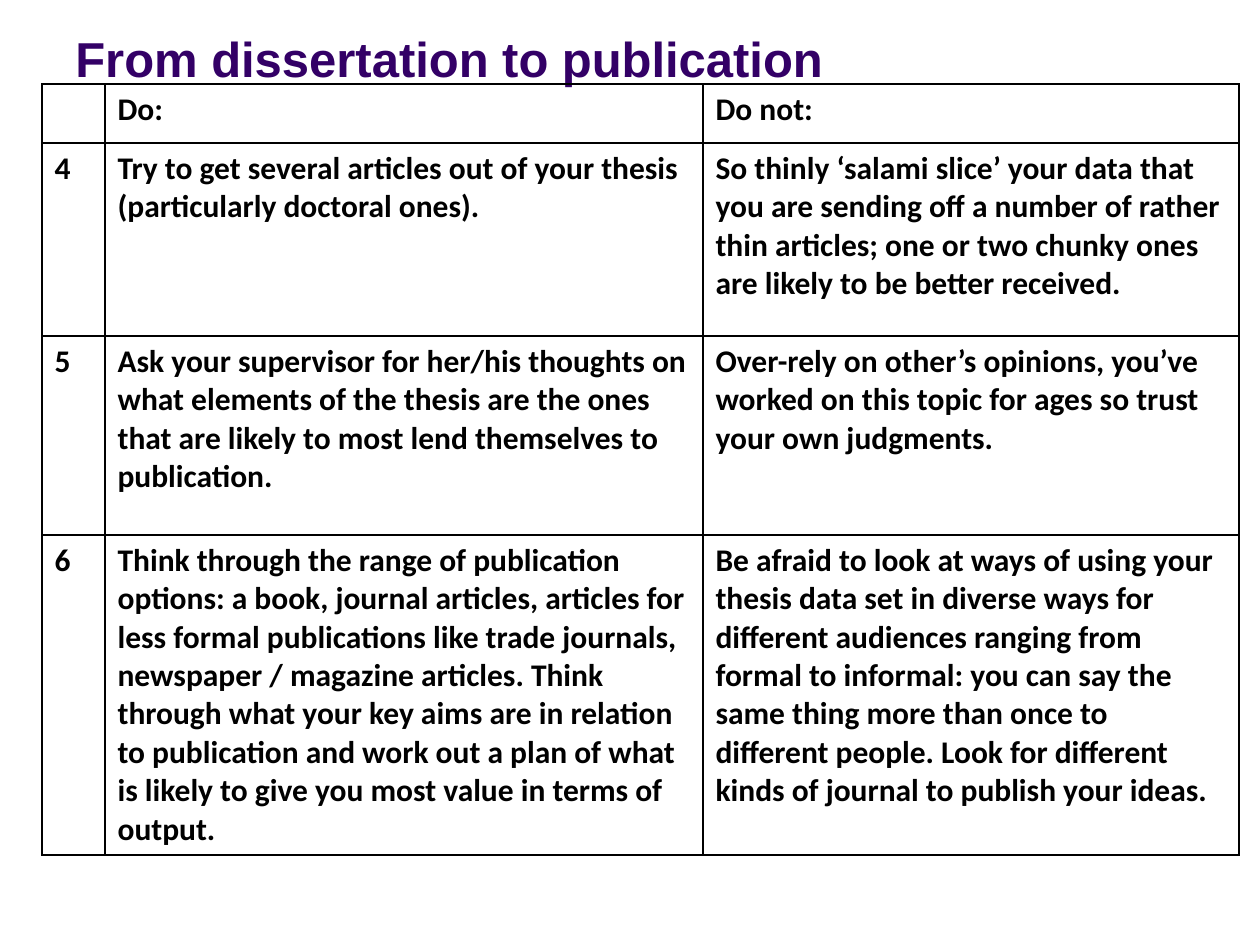
import pptx
import pptx.dml.color
import pptx.enum.text
import pptx.oxml
import pptx.oxml.ns
import pptx.util

EMU_PER_PX = 914400 / 126


def px(length):
    return pptx.util.Emu(round(length * EMU_PER_PX))


def style(paragraph, name, size, color):
    paragraph.font.name = name
    paragraph.font.size = pptx.util.Pt(size)
    paragraph.font.bold = True
    paragraph.font.color.rgb = pptx.dml.color.RGBColor.from_string(color)


deck = pptx.Presentation()
deck.slide_width, deck.slide_height = px(1260), px(945)
page = deck.slides.add_slide(deck.slide_layouts[6])

# Title
title = page.shapes.add_textbox(px(63), px(21), px(1040), px(73)).text_frame
title.word_wrap = True
title.vertical_anchor = pptx.enum.text.MSO_ANCHOR.BOTTOM
title.text = "From dissertation to publication"
style(title.paragraphs[0], "Arial", 28, "330066")

# Advice table
advice = [
    ("", "Do:", "Do not:"),
    ("4",
     "Try to get several articles out of your thesis (particularly doctoral ones).",
     "So thinly ‘salami slice’ your data that you are sending off a number of rather "
     "thin articles; one or two chunky ones are likely to be better received."),
    ("5",
     "Ask your supervisor for her/his thoughts on what elements of the thesis are the "
     "ones that are likely to most lend themselves to publication.",
     "Over-rely on other’s opinions, you’ve worked on this topic for ages so trust "
     "your own judgments."),
    ("6",
     "Think through the range of publication options: a book, journal articles, "
     "articles for less formal publications like trade journals, newspaper / magazine "
     "articles. Think through what your key aims are in relation to publication and "
     "work out a plan of what is likely to give you most value in terms of output.",
     "Be afraid to look at ways of using your thesis data set in diverse ways for "
     "different audiences ranging from formal to informal: you can say the same thing "
     "more than once to different people. Look for different kinds of journal to "
     "publish your ideas."),
]
column_widths = [63, 598, 536]
row_heights = [59, 193, 199, 320]

table = page.shapes.add_table(
    len(row_heights), len(column_widths),
    px(42), px(84), px(sum(column_widths)), px(sum(row_heights)),
).table
table.first_row = table.horz_banding = False
for column, width in zip(table.columns, column_widths):
    column.width = px(width)

for row, height, texts in zip(table.rows, row_heights, advice):
    row.height = px(height)
    for cell, text in zip(row.cells, texts):
        cell.text = text
        style(cell.text_frame.paragraphs[0], "Calibri", 18, "000000")
        cell.fill.background()
        properties = cell._tc.get_or_add_tcPr()
        for position, side in enumerate(("lnL", "lnR", "lnT", "lnB")):
            border = pptx.oxml.parse_xml(
                f'<a:{side} {pptx.oxml.ns.nsdecls("a")} w="12700">'
                '<a:solidFill><a:srgbClr val="000000"/></a:solidFill>'
                f'</a:{side}>'
            )
            properties.insert(position, border)

deck.save("out.pptx")
